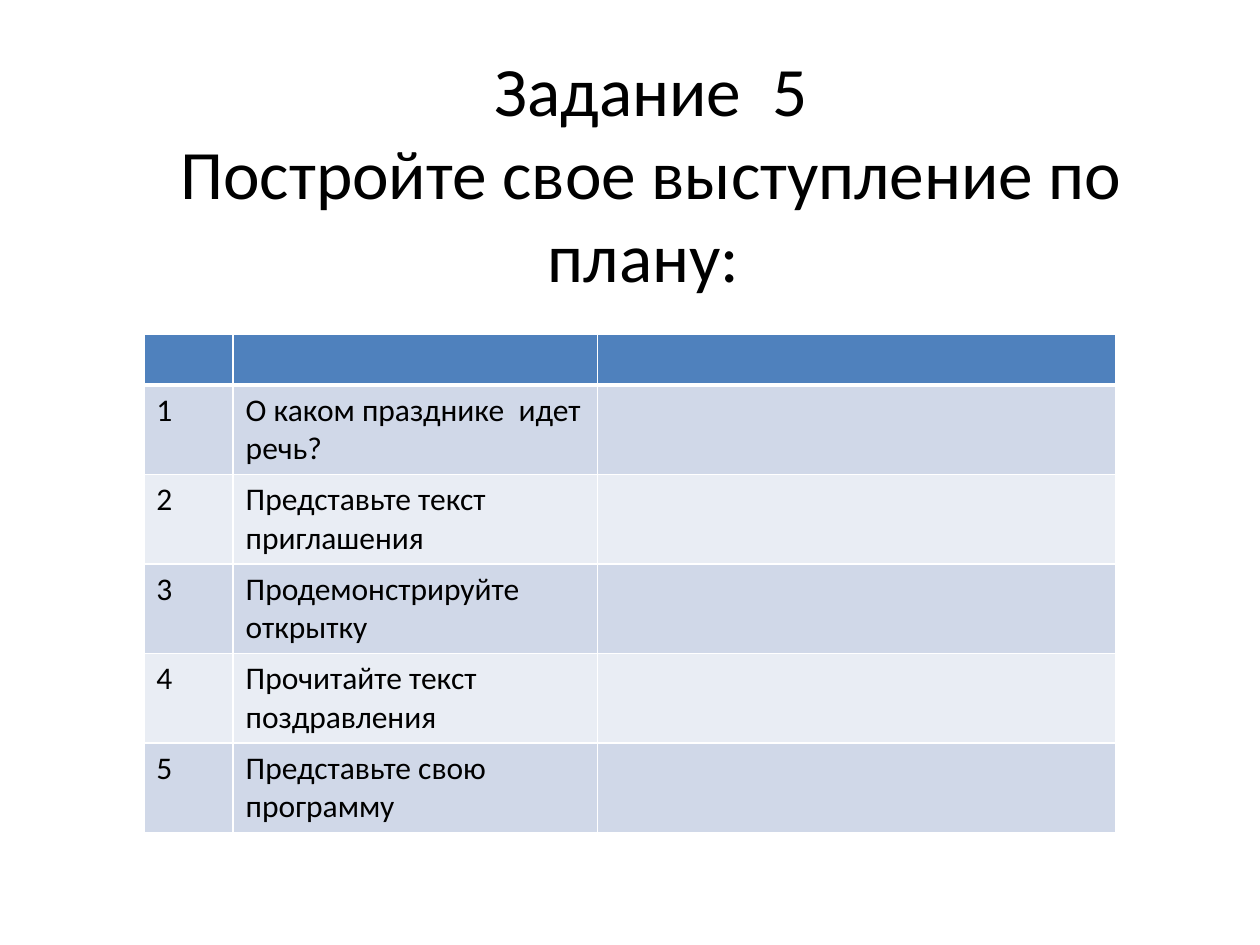
import lxml.etree
import pptx
import pptx.dml.color
import pptx.enum.text
import pptx.oxml.ns
import pptx.util

Cm = pptx.util.Cm
Pt = pptx.util.Pt
RGBColor = pptx.dml.color.RGBColor

BLACK = RGBColor(0x00, 0x00, 0x00)
WHITE = RGBColor(0xFF, 0xFF, 0xFF)
HEADER_BLUE = RGBColor(0x4F, 0x81, 0xBD)
BAND_DARK = RGBColor(0xD0, 0xD8, 0xE8)
BAND_LIGHT = RGBColor(0xE9, 0xED, 0xF4)

TITLE_FONT = {"name": "Calibri", "size": Pt(39.6)}
CELL_FONT = {"name": "Calibri", "size": Pt(18)}

HEADING = "Задание  5\vПостройте свое выступление по плану: "
PLAN = [
    "О каком празднике  идет речь?",
    "Представьте текст  приглашения",
    "Продемонстрируйте открытку",
    "Прочитайте текст поздравления",
    "Представьте свою программу",
]


def apply_format(target, values):
    for key, value in values.items():
        setattr(target, key, value)


def format_font(paragraph, values):
    apply_format(paragraph.font, values)
    paragraph.font.color.rgb = BLACK


def place_heading(slide, left, top, width, height):
    heading = slide.shapes.title
    apply_format(heading, {"left": left, "top": top, "width": width, "height": height})
    frame = heading.text_frame
    frame.text = HEADING
    apply_format(frame, {
        "word_wrap": True,
        "auto_size": pptx.enum.text.MSO_AUTO_SIZE.NONE,
        "vertical_anchor": pptx.enum.text.MSO_ANCHOR.MIDDLE,
        "margin_bottom": Cm(1.83),
    })
    paragraph = frame.paragraphs[0]
    paragraph.alignment = pptx.enum.text.PP_ALIGN.CENTER
    format_font(paragraph, TITLE_FONT)


def set_borders(cell, widths):
    qn = pptx.oxml.ns.qn
    properties = cell._tc.get_or_add_tcPr()
    for index, (side, width) in enumerate(widths.items()):
        border = lxml.etree.Element(qn(f"a:ln{side}"), w=str(Pt(width)))
        fill = lxml.etree.SubElement(border, qn("a:solidFill"))
        lxml.etree.SubElement(fill, qn("a:srgbClr"), val=str(WHITE))
        properties.insert(index, border)


def place_plan(slide, left, top, column_widths, header_height, row_height):
    heights = [header_height] + [row_height] * len(PLAN)
    plan = slide.shapes.add_table(
        len(heights), len(column_widths), left, top, sum(column_widths), sum(heights)
    ).table
    for column, width in zip(plan.columns, column_widths):
        column.width = width

    rows = [("", "", "")]
    rows += [(str(number), step, "") for number, step in enumerate(PLAN, 1)]
    for row_index, texts in enumerate(rows):
        plan.rows[row_index].height = heights[row_index]
        band = BAND_DARK if row_index % 2 else BAND_LIGHT
        borders = {
            "L": 1,
            "R": 1,
            "T": 3 if row_index == 1 else 1,
            "B": 3 if row_index == 0 else 1,
        }
        for column_index, text in enumerate(texts):
            cell = plan.cell(row_index, column_index)
            cell.text = text
            format_font(cell.text_frame.paragraphs[0], CELL_FONT)
            cell.fill.solid()
            cell.fill.fore_color.rgb = band if row_index else HEADER_BLUE
            set_borders(cell, borders)


def main():
    presentation = pptx.Presentation()
    presentation.slide_width = Cm(25.4)
    presentation.slide_height = Cm(19.05)
    slide = presentation.slides.add_slide(presentation.slide_layouts[5])
    place_heading(slide, Cm(1.7), Cm(2.72), Cm(22.86), Cm(3.18))
    place_plan(slide, Cm(2.9), Cm(6.73), [Cm(1.8), Cm(7.34), Cm(10.46)], Cm(1.02), Cm(1.8))
    presentation.save("out.pptx")


if __name__ == "__main__":
    main()
